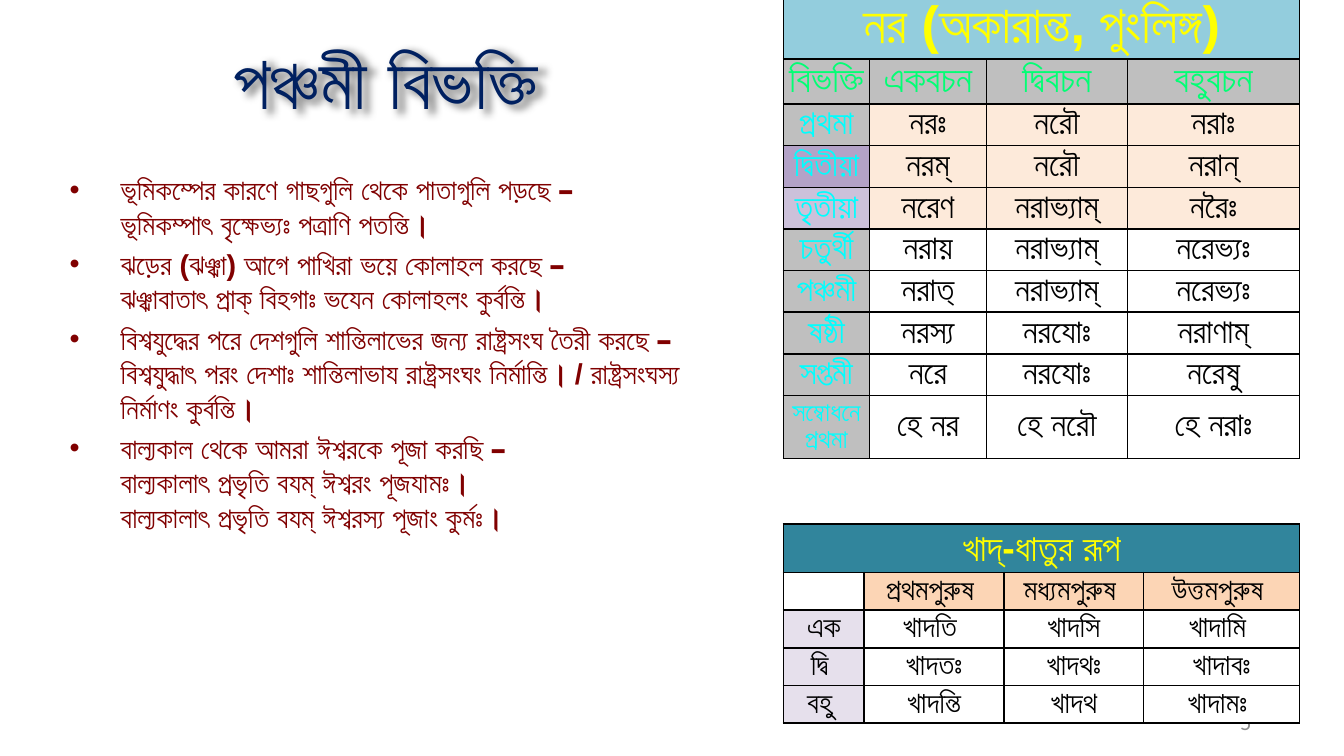
from dataclasses import dataclass

import lxml.etree
import pptx
import pptx.dml.color
import pptx.enum.text
import pptx.oxml
import pptx.oxml.ns
import pptx.util
from pptx.util import Inches

ALIGN = pptx.enum.text.PP_ALIGN
ANCHOR = pptx.enum.text.MSO_ANCHOR
NS = 'xmlns:a="http://schemas.openxmlformats.org/drawingml/2006/main"'

GREY, PEACH, WHITE, BLACK = "BFBFBF", "FDEADA", "FFFFFF", "000000"
YELLOW, CYAN, GREEN = "FFFF00", "00FFFF", "01FF74"


@dataclass
class Cell:
    text: str
    fill: str
    color: str = BLACK
    size: float = 18
    font: str = "Arial"
    clear: bool = False


@dataclass
class Grid:
    top: float
    cols: list[float]
    rows: list[float]
    pad: float
    cells: list[list[Cell]]


def rgb(code: str) -> pptx.dml.color.RGBColor:
    return pptx.dml.color.RGBColor.from_string(code)


def write(para, text: str, *, size: float, font: str = "Arial", color: str = BLACK,
          bold: bool = True, align=ALIGN.LEFT) -> None:
    """Fill a paragraph; its line breaks take the size of its runs."""
    para.text = text
    para.alignment = align
    for run in para.runs:
        face = run.font
        face.name, face.size, face.bold = font, pptx.util.Pt(size), bold
        face.color.rgb = rgb(color)
    points = str(round(size * 100))
    for gap in para._p.findall(pptx.oxml.ns.qn("a:br")):
        lxml.etree.SubElement(gap, pptx.oxml.ns.qn("a:rPr"), sz=points)
    if not text:
        para._p.get_or_add_endParaRPr().set("sz", points)


def add_box(slide, left: float, top: float, width: float, height: float, anchor):
    box = slide.shapes.add_textbox(Inches(left), Inches(top), Inches(width), Inches(height))
    box.text_frame.word_wrap = True
    box.text_frame.vertical_anchor = anchor
    return box


def add_shadow(box) -> None:
    box._element.spPr.append(pptx.oxml.parse_xml(
        f'<a:effectLst {NS}><a:outerShdw blurRad="50800" dist="38100" dir="2700000">'
        '<a:srgbClr val="000000"><a:alpha val="40000"/></a:srgbClr>'
        '</a:outerShdw></a:effectLst>'))


def add_bullet(para) -> None:
    props = para._p.get_or_add_pPr()
    props.set("marL", str(Inches(0.38)))
    props.set("indent", str(-Inches(0.38)))
    for xml in (f'<a:spcBef {NS}><a:spcPct val="20000"/></a:spcBef>',
                f'<a:buClr {NS}><a:srgbClr val="800000"/></a:buClr>',
                f'<a:buFont {NS} typeface="Arial"/>',
                f'<a:buChar {NS} char="•"/>'):
        props.append(pptx.oxml.parse_xml(xml))


def style(box, cell: Cell, pad: float) -> None:
    """Give a table cell its borders, fill, margins and text."""
    props = box._tc.get_or_add_tcPr()
    for side in "LRTB":
        props.append(pptx.oxml.parse_xml(
            f'<a:ln{side} {NS} w="12700"><a:solidFill><a:srgbClr val="{BLACK}"/>'
            f'</a:solidFill></a:ln{side}>'))
    box.fill.solid()
    box.fill.fore_color.rgb = rgb(cell.fill)
    if cell.clear:
        tint = props.find(".//" + pptx.oxml.ns.qn("a:srgbClr") + f"[@val='{cell.fill}']")
        lxml.etree.SubElement(tint, pptx.oxml.ns.qn("a:alpha"), val="0")
    box.margin_left = box.margin_right = Inches(pad)
    box.margin_top = box.margin_bottom = 0
    box.vertical_anchor = ANCHOR.MIDDLE
    write(box.text_frame.paragraphs[0], cell.text, size=cell.size, font=cell.font,
          color=cell.color, align=ALIGN.CENTER)


def add_grid(slide, grid: Grid) -> None:
    """Draw a table whose first row is one merged heading."""
    table = slide.shapes.add_table(
        len(grid.rows), len(grid.cols), Inches(5.83), Inches(grid.top),
        Inches(sum(grid.cols)), Inches(sum(grid.rows))).table
    table.first_row = table.horz_banding = False
    for col, width in zip(table.columns, grid.cols):
        col.width = Inches(width)
    for row, height in zip(table.rows, grid.rows):
        row.height = Inches(height)
    head = grid.cells[0][0]
    blank = Cell("", head.fill, size=head.size)
    for r, line in enumerate(grid.cells):
        for c in range(len(grid.cols)):
            style(table.cell(r, c), line[c] if c < len(line) else blank, grid.pad)
    table.cell(0, 0).merge(table.cell(0, len(grid.cols) - 1))


POINTS = [
    "ভূমিকম্পের কারণে গাছগুলি থেকে পাতাগুলি পড়ছে – \nভূমিকম্পাৎ বৃক্ষেভ্যঃ পত্রাণি পতন্তি।",
    "ঝড়ের (ঝঞ্ঝা) আগে পাখিরা ভয়ে কোলাহল করছে –\n"
    "ঝঞ্ঝাবাতাৎ প্রাক্ বিহগাঃ ভযেন কোলাহলং কুর্বন্তি।",
    "বিশ্বযুদ্ধের পরে দেশগুলি শান্তিলাভের জন্য রাষ্ট্রসংঘ তৈরী করছে –\n"
    "বিশ্বযুদ্ধাৎ পরং দেশাঃ শান্তিলাভায রাষ্ট্রসংঘং নির্মান্তি। / রাষ্ট্রসংঘস্য নির্মাণং কুর্বন্তি।",
    "বাল্যকাল থেকে আমরা ঈশ্বরকে পূজা করছি –\nবাল্যকালাৎ প্রভৃতি বযম্ ঈশ্বরং পূজযামঃ।\n"
    "বাল্যকালাৎ প্রভৃতি বযম্ ঈশ্বরস্য পূজাং কুর্মঃ।",
]
CASES = [
    ("প্রথমা", "নরঃ", "নরৌ", "নরাঃ"),
    ("দ্বিতীয়া", "নরম্", "নরৌ", "নরান্"),
    ("তৃতীয়া", "নরেণ", "নরাভ্যাম্", "নরৈঃ"),
    ("চতুর্থী", "নরায়", "নরাভ্যাম্", "নরেভ্যঃ"),
    ("পঞ্চমী", "নরাত্", "নরাভ্যাম্", "নরেভ্যঃ"),
    ("ষষ্ঠী", "নরস্য", "নরযোঃ", "নরাণাম্"),
    ("সপ্তমী", "নরে", "নরযোঃ", "নরেষু"),
    ("সম্বোধনে প্রথমা", "হে নর", "হে নরৌ", "হে নরাঃ"),
]
VERBS = [
    ("এক", "খাদতি ", "খাদসি", "খাদামি "),
    ("দ্বি ", "খাদতঃ", "খাদথঃ", "খাদাবঃ"),
    ("বহু ", "খাদন্তি", "খাদথ", "খাদামঃ "),
]


def noun_grid() -> Grid:
    cells = [[Cell("নর (অকারান্ত, পুংলিঙ্গ)", "93CDDD", YELLOW, 28)],
             [Cell(text, GREY, GREEN, 20, "Calibri")
              for text in ("বিভক্তি", "একবচন", "দ্বিবচন", "বহুবচন")]]
    tints = {1: "B3A2C7", 2: "CCC1DA"}
    for i, (name, *forms) in enumerate(CASES):
        size = 14 if i == len(CASES) - 1 else 18
        cells.append([Cell(name, tints.get(i, GREY), CYAN, size, "Calibri")]
                     + [Cell(form, PEACH, font="Calibri", clear=i > 2) for form in forms])
    return Grid(-0.06, [0.64, 0.87, 1.05, 1.28], [0.5, 0.32] + [0.31] * 7 + [0.43], 0, cells)


def verb_grid() -> Grid:
    cells = [[Cell("খাদ্-ধাতুর রূপ", "31859C", YELLOW, 20)],
             [Cell("", WHITE, size=16)] + [Cell(text, "FCD5B5", size=16) for text in
              ("প্রথমপুরুষ ", "মধ্যমপুরুষ ", "উত্তমপুরুষ ")]]
    for name, *forms in VERBS:
        cells.append([Cell(name, "E6E0EC", size=16)]
                     + [Cell(form, WHITE, size=16) for form in forms])
    return Grid(3.9, [0.6, 1.04, 1.04, 1.16], [0.36] + [0.28] * 4, 0.07, cells)


def main() -> None:
    deck = pptx.Presentation()
    deck.slide_width, deck.slide_height = Inches(10), Inches(5.625)
    slide = deck.slides.add_slide(deck.slide_layouts[6])

    title = add_box(slide, 0.83, 0.21, 4.08, 0.77, ANCHOR.MIDDLE)
    write(title.text_frame.paragraphs[0], "পঞ্চমী বিভক্তি", size=40, color="002060",
          align=ALIGN.CENTER)
    add_shadow(title)

    body = add_box(slide, 0.42, 1.23, 5.08, 4.25, ANCHOR.TOP).text_frame
    for i, point in enumerate(POINTS):
        para = body.add_paragraph() if i else body.paragraphs[0]
        write(para, point, size=15.4, color="800000")
        add_bullet(para)

    number = add_box(slide, 7.08, 5.22, 2.33, 0.3, ANCHOR.MIDDLE)
    write(number.text_frame.paragraphs[0], "5", size=12, font="Calibri", color="8C8C8C",
          bold=False, align=ALIGN.RIGHT)

    for grid in (noun_grid(), verb_grid()):
        add_grid(slide, grid)
    deck.save("out.pptx")


if __name__ == "__main__":
    main()
